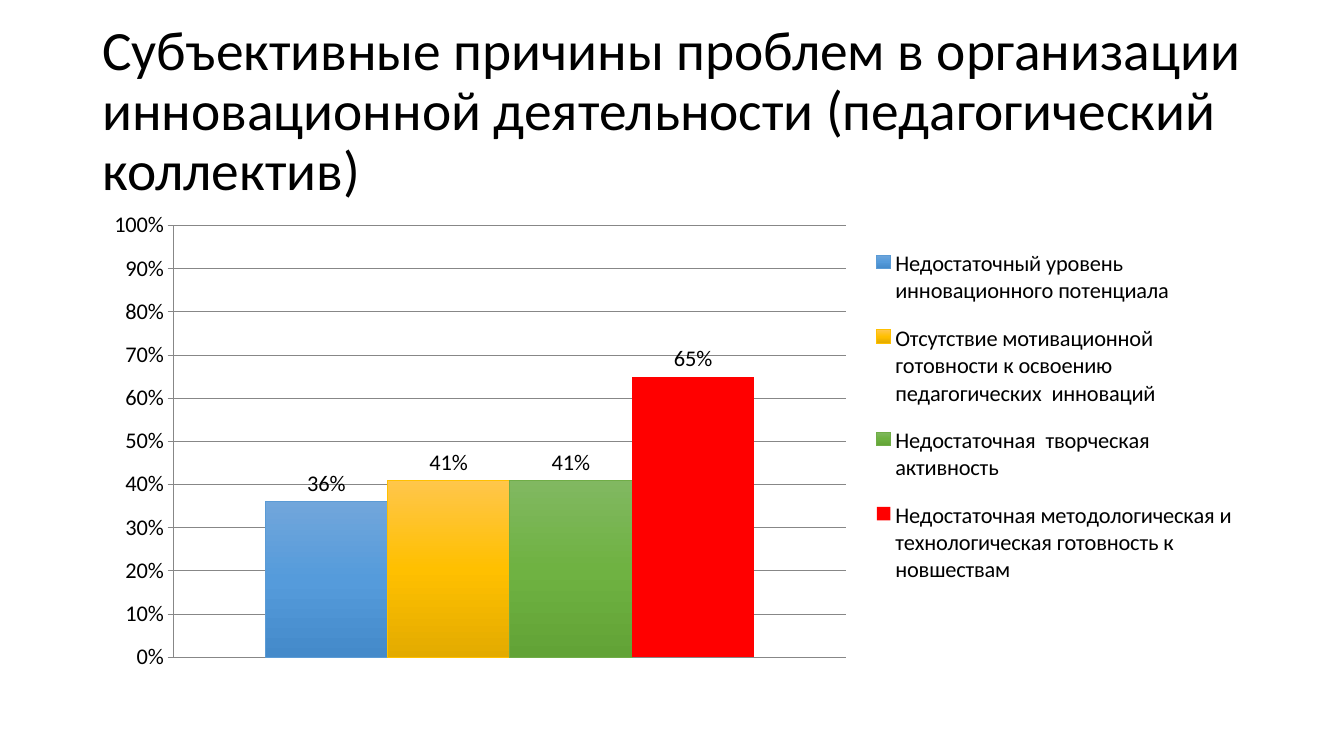
from pptx import Presentation
from pptx.chart.data import CategoryChartData
from pptx.dml.color import RGBColor
from pptx.enum.chart import XL_CHART_TYPE as ChartType
from pptx.enum.chart import XL_LABEL_POSITION as LabelPosition
from pptx.enum.chart import XL_LEGEND_POSITION as LegendPosition
from pptx.enum.chart import XL_TICK_MARK as TickMark
from pptx.enum.text import MSO_ANCHOR as Anchor
from pptx.oxml import parse_xml
from pptx.oxml.ns import nsdecls, qn
from pptx.util import Pt

EMU_PER_PX = 9525
BLACK = RGBColor(0x00, 0x00, 0x00)
GRAY = RGBColor(0x87, 0x87, 0x87)
RED = RGBColor(0xFF, 0x00, 0x00)
BLUE = RGBColor(0x5B, 0x9B, 0xD5)
GOLD = RGBColor(0xFF, 0xC0, 0x00)
GREEN = RGBColor(0x70, 0xAD, 0x47)
BLUE_SHADES = (RGBColor(0x71, 0xA6, 0xDB), RGBColor(0x55, 0x9B, 0xDB), RGBColor(0x44, 0x8A, 0xCA))
GOLD_SHADES = (RGBColor(0xFF, 0xC6, 0x4B), RGBColor(0xFF, 0xC0, 0x00), RGBColor(0xE3, 0xAB, 0x00))
GREEN_SHADES = (RGBColor(0x81, 0xB8, 0x61), RGBColor(0x6F, 0xB2, 0x42), RGBColor(0x62, 0xA3, 0x36))

TITLE = ("Субъективные причины проблем в организации инновационной "
         "деятельности (педагогический коллектив)")
# name, value, fill shades from top to bottom, outline
REASONS = [
    ("Недостаточный уровень инновационного потенциала", 0.36, BLUE_SHADES, BLUE),
    ("Отсутствие мотивационной готовности к освоению педагогических  инноваций",
     0.41, GOLD_SHADES, GOLD),
    ("Недостаточная  творческая активность", 0.41, GREEN_SHADES, GREEN),
    ("Недостаточная методологическая и технологическая готовность к новшествам",
     0.65, (RED,), None),
]


def px(length):
    return length * EMU_PER_PX


def apply(target, values):
    for name, value in values.items():
        setattr(target, name, value)


def manual_layout(x, y, w, h, inner=False):
    """Return a c:layout element; lengths are fractions of the chart."""
    target = '<c:layoutTarget val="inner"/>' if inner else ""
    sizes = "".join(f'<c:{tag} val="{value}"/>'
                    for tag, value in zip("xywh", (x, y, w, h)))
    return parse_xml(f'<c:layout {nsdecls("c")}><c:manualLayout>{target}'
                     '<c:xMode val="edge"/><c:yMode val="edge"/>'
                     f'{sizes}</c:manualLayout></c:layout>')


def vertical_gradient(shades):
    step = 100000 // (len(shades) - 1)
    stops = "".join(f'<a:gs pos="{index * step}"><a:srgbClr val="{shade}"/></a:gs>'
                    for index, shade in enumerate(shades))
    return parse_xml(f'<a:gradFill {nsdecls("a")} rotWithShape="1"><a:gsLst>{stops}'
                     '</a:gsLst><a:lin ang="5400000" scaled="0"/></a:gradFill>')


class SlideBuilder:
    def __init__(self, slide, font_name, color):
        self.slide = slide
        self.font_name = font_name
        self.color = color

    def style_font(self, font, size):
        apply(font, {"name": self.font_name, "size": Pt(size), "bold": False})
        font.color.rgb = self.color

    def title(self, text, box, size):
        shape = self.slide.shapes.add_textbox(*map(px, box))
        frame = shape.text_frame
        apply(frame, {"word_wrap": True, "vertical_anchor": Anchor.MIDDLE})
        paragraph = frame.paragraphs[0]
        apply(paragraph, {"text": text, "line_spacing": 0.9})
        self.style_font(paragraph.font, size)

    def column_chart(self, reasons, box, size):
        data = CategoryChartData(number_format="0%")
        data.categories = ["1"]
        for name, value, *_ in reasons:
            data.add_series(name, [value])
        chart = self.slide.shapes.add_chart(
            ChartType.COLUMN_CLUSTERED, *map(px, box), data).chart
        apply(chart, {"has_title": False, "has_legend": True})
        self.style_font(chart.font, size)
        self.style_axes(chart)
        self.place_parts(chart)
        plot = chart.plots[0]
        apply(plot, {"gap_width": 150, "overlap": 0, "vary_by_categories": False})
        for series, (_, _, shades, outline) in zip(plot.series, reasons):
            self.style_series(series, shades, outline, size)

    def style_axes(self, chart):
        chart.category_axis.visible = False
        axis = chart.value_axis
        apply(axis, {"minimum_scale": 0, "maximum_scale": 1, "major_unit": 0.1,
                     "has_major_gridlines": True,
                     "major_tick_mark": TickMark.OUTSIDE,
                     "minor_tick_mark": TickMark.NONE})
        apply(axis.tick_labels, {"number_format": "0%", "number_format_is_linked": False})
        for line in (axis.format.line, axis.major_gridlines.format.line):
            line.color.rgb = GRAY
            line.width = Pt(0.75)

    def place_parts(self, chart):
        apply(chart.legend, {"position": LegendPosition.RIGHT, "include_in_layout": False})
        chart.legend._element.insert(1, manual_layout(0.67, 0.06, 0.32, 0.78))
        plot_area = chart._chartSpace.chart.plotArea
        for layout in plot_area.findall(qn("c:layout")):
            plot_area.remove(layout)
        plot_area.insert(0, manual_layout(0.07, 0.05, 0.58, 0.9, inner=True))

    def style_series(self, series, shades, outline, size):
        if len(shades) > 1:
            series._element.get_or_add_spPr().insert(0, vertical_gradient(shades))
        else:
            series.format.fill.solid()
            series.format.fill.fore_color.rgb = shades[0]
        line = series.format.line
        if outline is None:
            line.fill.background()
        else:
            line.color.rgb = outline
            line.width = Pt(0.5)
        labels = series.data_labels
        apply(labels, {"show_value": True, "number_format": "0%",
                       "number_format_is_linked": False,
                       "position": LabelPosition.OUTSIDE_END})
        self.style_font(labels.font, size)


def main():
    presentation = Presentation()
    apply(presentation, {"slide_width": px(1280), "slide_height": px(720)})
    slide = presentation.slides.add_slide(presentation.slide_layouts[6])
    builder = SlideBuilder(slide, "Calibri", BLACK)
    builder.title(TITLE, (88, 38, 1104, 139), 39.6)
    builder.column_chart(REASONS, (88, 192, 1104, 457), 16)
    presentation.save("out.pptx")


if __name__ == "__main__":
    main()
